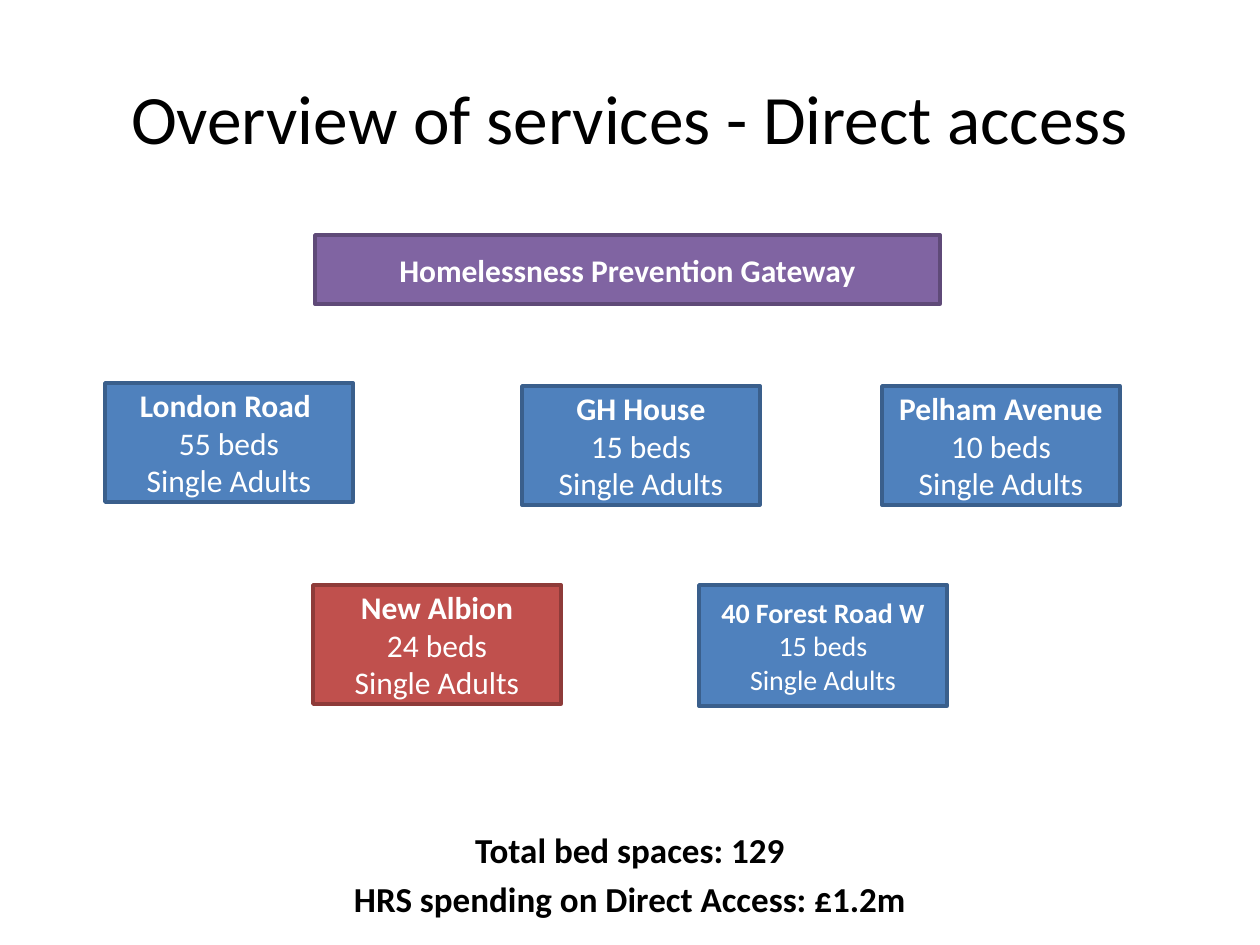
import pptx
import pptx.util
from pptx.dml.color import RGBColor
from pptx.enum.shapes import MSO_SHAPE
from pptx.enum.text import MSO_ANCHOR, PP_ALIGN

PX = 914400 / 126
FONT = "Calibri"
BLACK = RGBColor(0x00, 0x00, 0x00)
WHITE = RGBColor(0xFF, 0xFF, 0xFF)
BLUE, BLUE_EDGE = RGBColor(0x4F, 0x81, 0xBD), RGBColor(0x3A, 0x5F, 0x8C)
RED, RED_EDGE = RGBColor(0xC0, 0x50, 0x4D), RGBColor(0x8E, 0x3B, 0x39)
PURPLE, PURPLE_EDGE = RGBColor(0x80, 0x64, 0xA2), RGBColor(0x5F, 0x4A, 0x78)

# Name, beds, box in px, text size, fill, edge
SERVICES = [
    ("London Road ", 55, (105, 383, 248, 119), 18, BLUE, BLUE_EDGE),
    ("GH House", 15, (522, 386, 238, 119), 18, BLUE, BLUE_EDGE),
    ("Pelham Avenue", 10, (882, 386, 238, 119), 18, BLUE, BLUE_EDGE),
    ("New Albion", 24, (313, 585, 248, 119), 18, RED, RED_EDGE),
    ("40 Forest Road W", 15, (699, 585, 248, 121), 16, BLUE, BLUE_EDGE),
]


def emu(box):
    return [pptx.util.Emu(round(length * PX)) for length in box]


def write_lines(frame, lines, size, color, gap=0):
    """Write (text, bold) pairs as centred paragraphs, gap points apart."""
    frame.word_wrap = True
    frame.vertical_anchor = MSO_ANCHOR.MIDDLE
    frame.margin_top = frame.margin_bottom = 0
    for index, (text, bold) in enumerate(lines):
        paragraph = frame.add_paragraph() if index else frame.paragraphs[0]
        paragraph.text = text
        paragraph.alignment = PP_ALIGN.CENTER
        if index:
            paragraph.space_before = pptx.util.Pt(gap)
        font = paragraph.font
        font.name, font.size, font.bold = FONT, pptx.util.Pt(size), bold
        font.color.rgb = color


def add_label(slide, box, lines, size, gap=0):
    frame = slide.shapes.add_textbox(*emu(box)).text_frame
    write_lines(frame, lines, size, BLACK, gap)


def add_card(slide, box, lines, size, fill, edge):
    card = slide.shapes.add_shape(MSO_SHAPE.RECTANGLE, *emu(box))
    card.shadow.inherit = False
    card.fill.solid()
    card.fill.fore_color.rgb = fill
    card.line.color.rgb = edge
    card.line.width = pptx.util.Pt(2)
    write_lines(card.text_frame, lines, size, WHITE)


def add_service(slide, name, beds, box, size, fill, edge):
    lines = [(name, True), (f"{beds} beds", False), ("Single Adults", False)]
    add_card(slide, box, lines, size, fill, edge)


def main():
    deck = pptx.Presentation()
    deck.slide_width, deck.slide_height = emu((1260, 945))
    slide = deck.slides.add_slide(deck.slide_layouts[6])

    add_label(slide, (63, 38, 1134, 157),
              [("Overview of services - Direct access", False)], 39.6)
    add_card(slide, (315, 235, 625, 69),
             [("Homelessness Prevention Gateway", True)], 18, PURPLE, PURPLE_EDGE)
    for service in SERVICES:
        add_service(slide, *service)
    add_label(slide, (63, 827, 1134, 94),
              [("Total bed spaces: 129", True),
               ("HRS spending on Direct Access: £1.2m", True)], 20, gap=4)

    deck.save("out.pptx")


if __name__ == "__main__":
    main()
